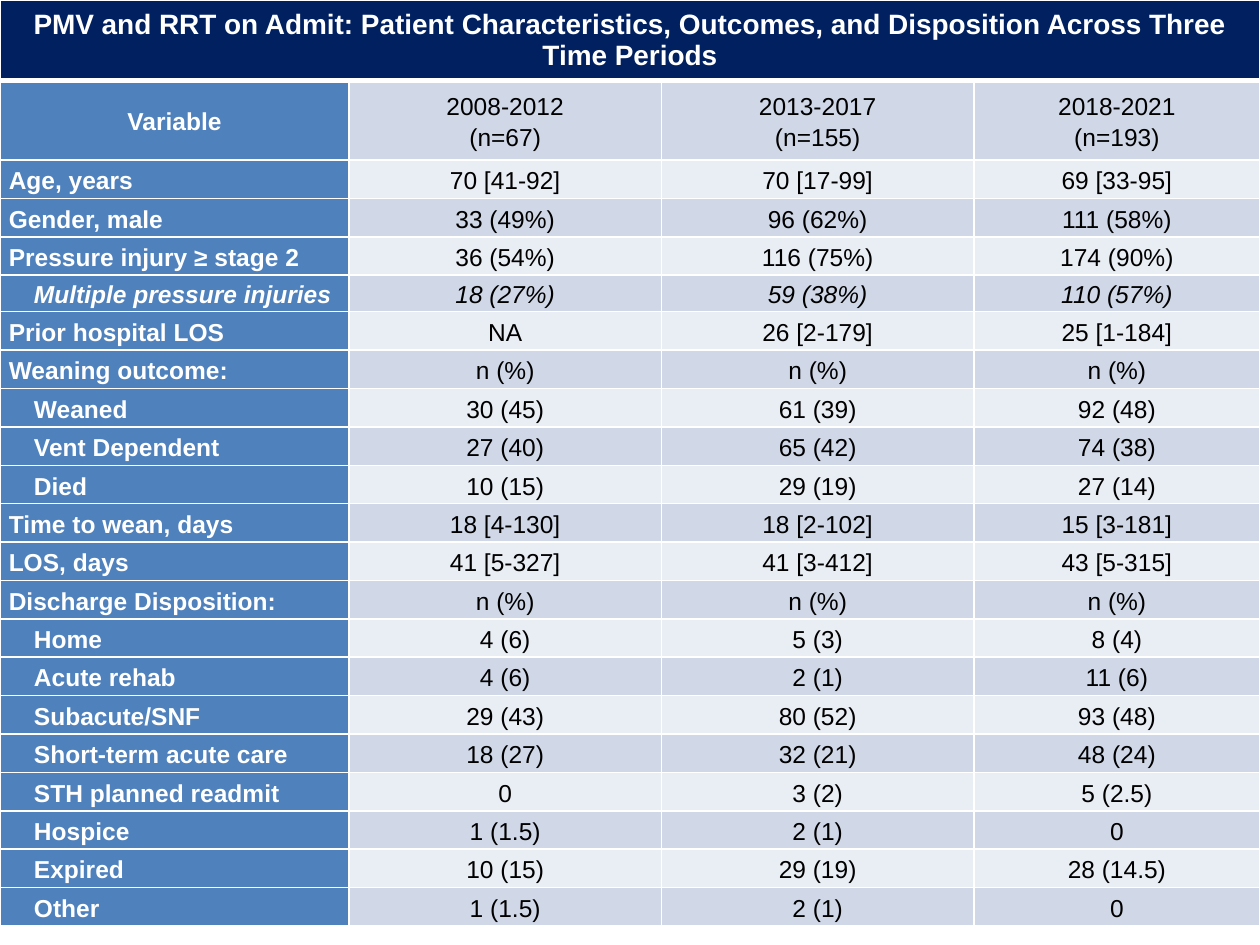
from lxml import etree
from pptx import Presentation, util as u
from pptx.dml.color import RGBColor
from pptx.enum import text
from pptx.oxml.ns import qn

TITLE = ("PMV and RRT on Admit: Patient Characteristics, Outcomes, "
         "and Disposition Across Three Time Periods")
HEADS = ["Variable", "2008-2012\n(n=67)", "2013-2017\n(n=155)", "2018-2021\n(n=193)"]
ROWS = [
    (0, "Age, years", "70 [41-92]", "70 [17-99]", "69 [33-95]"),
    (0, "Gender, male", "33 (49%)", "96 (62%)", "111 (58%)"),
    (0, "Pressure injury ≥ stage 2", "36 (54%)", "116 (75%)", "174 (90%)"),
    (1, "Multiple pressure injuries", "18 (27%)", "59 (38%)", "110 (57%)"),
    (0, "Prior hospital LOS", "NA", "26 [2-179]", "25 [1-184]"),
    (0, "Weaning outcome:", "n (%)", "n (%)", "n (%)"),
    (1, "Weaned", "30 (45)", "61 (39)", "92 (48)"),
    (1, "Vent Dependent", "27 (40)", "65 (42)", "74 (38)"),
    (1, "Died", "10 (15)", "29 (19)", "27 (14)"),
    (0, "Time to wean, days", "18 [4-130]", "18 [2-102]", "15 [3-181]"),
    (0, "LOS, days", "41 [5-327]", "41 [3-412]", "43 [5-315]"),
    (0, "Discharge Disposition:", "n (%)", "n (%)", "n (%)"),
    (1, "Home", "4 (6)", "5 (3)", "8 (4)"),
    (1, "Acute rehab", "4 (6)", "2 (1)", "11 (6)"),
    (1, "Subacute/SNF", "29 (43)", "80 (52)", "93 (48)"),
    (1, "Short-term acute care", "18 (27)", "32 (21)", "48 (24)"),
    (1, "STH planned readmit", "0", "3 (2)", "5 (2.5)"),
    (1, "Hospice", "1 (1.5)", "2 (1)", "0"),
    (1, "Expired", "10 (15)", "29 (19)", "28 (14.5)"),
    (1, "Other", "1 (1.5)", "2 (1)", "0"),
]
ITALIC = "Multiple pressure injuries"
COLORS = {"title": "002060", "label": "4F81BD", "dark": "D0D8E8",
          "light": "E9EDF4", "white": "FFFFFF", "black": "000000"}
WIDTHS = [2.77, 2.48, 2.48, 2.27]
HIGH, TOP, HEAD, SLIM = 7.35, 0.64, 0.63, 0.29
BODY = (HIGH - TOP - HEAD - SLIM) / (len(ROWS) - 1)


def rgb(name):
    return RGBColor.from_string(COLORS[name])


def edge(cell, side, width):
    line = etree.SubElement(cell._tc.get_or_add_tcPr(), qn("a:ln" + side),
                            w=str(u.Pt(width)))
    fill = etree.SubElement(line, qn("a:solidFill"))
    etree.SubElement(fill, qn("a:srgbClr"), val=COLORS["white"])


def style(cell, row, back):
    thick = {(0, "B"), (1, "T")}
    for side in "LRTB":
        edge(cell, side, 3 if (row, side) in thick else 1)
    cell.fill.solid()
    cell.fill.fore_color.rgb = rgb(back)
    cell.margin_left = cell.margin_right = u.Inches(0.07)
    cell.margin_top = cell.margin_bottom = 0
    cell.vertical_anchor = text.MSO_ANCHOR.MIDDLE


def write(cell, words, size, ink, bold, center=True, italic=False, space=None, level=0):
    frame = cell.text_frame
    for i, part in enumerate(words.split("\n")):
        para = frame.add_paragraph() if i else frame.paragraphs[0]
        para.alignment = text.PP_ALIGN.CENTER if center else text.PP_ALIGN.LEFT
        if space:
            para.line_spacing = space
        if level:
            para._p.get_or_add_pPr().set("marL", str(u.Inches(0.2 * level)))
        run = para.add_run()
        run.text = part
        font = run.font
        font.name, font.size = "Arial", u.Pt(size)
        font.bold, font.italic = bold, italic
        font.color.rgb = rgb(ink)


def main():
    deck = Presentation()
    deck.slide_width, deck.slide_height = u.Inches(10), u.Inches(7.5)
    slide = deck.slides.add_slide(deck.slide_layouts[6])
    lines = [(0, *HEADS)] + ROWS
    table = slide.shapes.add_table(len(lines) + 1, len(WIDTHS), 0, 0,
                                   u.Inches(10), u.Inches(HIGH)).table
    table.first_row = table.horz_banding = False
    for col, width in zip(table.columns, WIDTHS):
        col.width = u.Inches(width)
    highs = [TOP, HEAD] + [SLIM if r[1] == ITALIC else BODY for r in ROWS]
    for row, high in zip(table.rows, highs):
        row.height = u.Inches(high)

    for cell in table.rows[0].cells:
        style(cell, 0, "title")
    table.cell(0, 0).merge(table.cell(0, len(WIDTHS) - 1))
    write(table.cell(0, 0), TITLE, 16, "white", True)

    for r, (level, *words) in enumerate(lines, 1):
        band = "dark" if r % 2 else "light"
        for c, word in enumerate(words):
            cell, label = table.cell(r, c), c == 0
            style(cell, r, "label" if label else band)
            write(cell, word, 14, "white" if label else "black", label,
                  center=not label or r == 1, italic=words[0] == ITALIC,
                  space=1.15, level=level if label else 0)
    deck.save("out.pptx")


if __name__ == "__main__":
    main()
